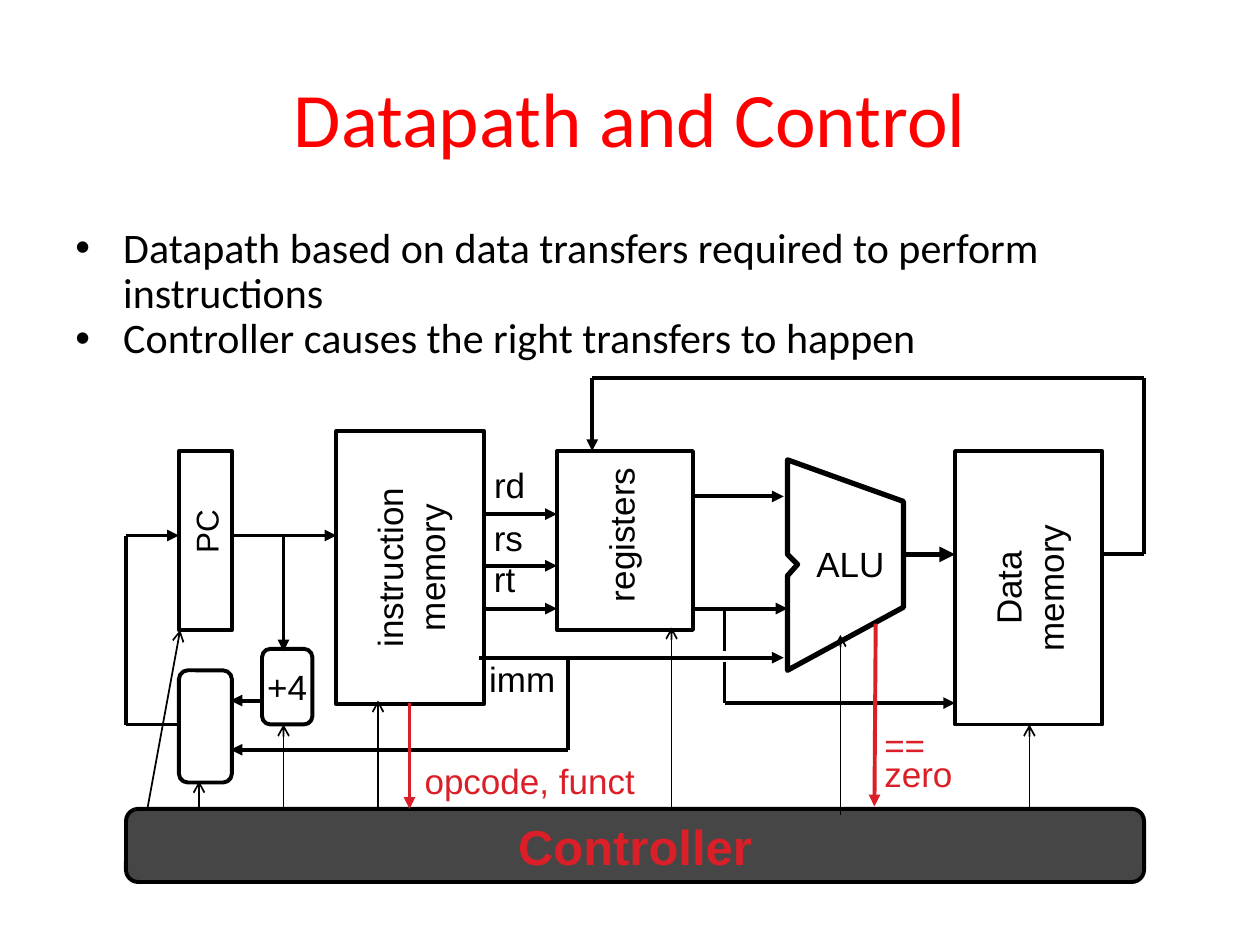
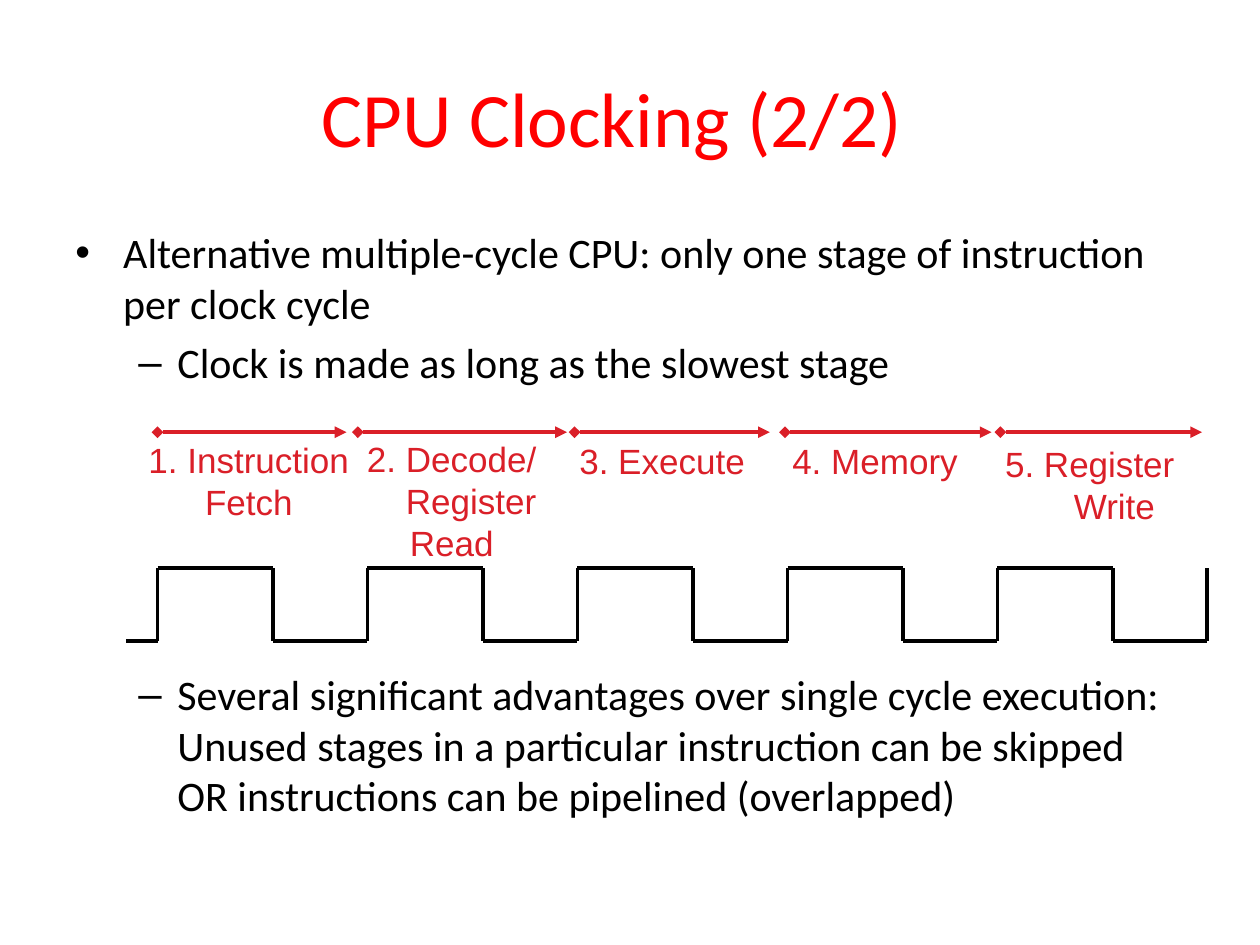
"""Build two slides on the datapath and the clocking of a CPU."""
import lxml.etree
import pptx
import pptx.dml.color
import pptx.enum.shapes
import pptx.enum.text
import pptx.oxml.ns
import pptx.util

HUES = {"title": "FF0000", "ink": "000000", "red": "DA1F28", "paper": "FFFFFF", "slate": "464646"}
INCH = 2.54
ALIGN = pptx.enum.text.PP_ALIGN
ANCHOR = pptx.enum.text.MSO_ANCHOR
KINDS = pptx.enum.shapes.MSO_SHAPE
BODY = (0.5, 1.75, 9, 4.95)

PATH = {
    "title": "Datapath and Control",
    "width": 9,
    "points": [
        (0, "Datapath based on data transfers required to perform instructions", 0),
        (0, "Controller causes the right transfers to happen", 0),
    ],
    "leading": 0.9,
}
CLOCK = {
    "title": "CPU Clocking (2/2)",
    "width": 8.72,
    "points": [
        (0, "Alternative multiple-cycle CPU: only one stage of instruction per clock cycle", 0),
        (1, "Clock is made as long as the slowest stage", 5.2),
        (1, "Several significant advantages over single cycle execution: Unused stages in a "
            "particular instruction can be skipped OR instructions can be pipelined (overlapped)", 161),
    ],
    "leading": 1.0,
}
LEVELS = [("•", 0.38, 0.38), ("–", 0.81, 0.31)]

BLOCKS = [
    ("RECTANGLE", (1.42, 3.58, 0.42, 1.42), 0, []),
    ("RECTANGLE", (2.17, 3.92, 2.17, 1.17), 270, ["instruction", "memory"]),
    ("ROUNDED_RECTANGLE", (2.08, 5.15, 0.4, 0.6), 0, ["+4"]),
    ("RECTANGLE", (4.42, 3.58, 1.08, 1.42), 0, []),
    ("RECTANGLE", (7.08, 4.08, 2.17, 1.17), 270, ["Data", "memory"]),
    ("ROUNDED_RECTANGLE", (1.42, 5.32, 0.42, 0.89), 0, []),
]
ALU = [(6.25, 3.65), (7.17, 3.98), (7.17, 4.82), (6.25, 5.32), (6.25, 4.57), (6.33, 4.48), (6.25, 4.4)]
LABELS = [
    ("PC", (1.36, 4.02, 0.55, 0.4), 270, 18, "ink"),
    ("registers", (4.29, 4.03, 1.27, 0.43), 270, 20, "ink"),
    ("rd", (3.82, 3.63, 0.45, 0.43), 0, 20, "ink"),
    ("rs", (3.82, 4.05, 0.43, 0.43), 0, 20, "ink"),
    ("rt", (3.82, 4.38, 0.37, 0.43), 0, 20, "ink"),
    ("imm", (3.78, 5.17, 0.73, 0.43), 0, 20, "ink"),
    ("ALU", (6.38, 4.26, 0.74, 0.43), 0, 20, "ink"),
    ("opcode, funct", (3.27, 5.98, 1.87, 0.43), 0, 20, "red"),
]
FLOWS = [
    [(1.83, 4.25), (2.67, 4.25)],
    [(2.25, 4.25), (2.25, 5.17)],
    [(2.08, 5.56), (1.83, 5.56)],
    [(1.42, 5.75), (1, 5.75), (1, 4.25), (1.42, 4.25)],
    [(3.83, 4.08), (4.42, 4.08)],
    [(3.83, 4.49), (4.42, 4.49)],
    [(3.83, 4.83), (4.42, 4.83)],
    [(3.8, 5.22), (6.22, 5.22)],
    [(4.51, 5.22), (4.51, 5.95), (1.83, 5.95)],
    [(5.5, 3.94), (6.22, 3.94)],
    [(5.5, 4.83), (6.25, 4.83)],
    [(5.75, 5.25), (5.75, 5.58), (7.58, 5.58)],
    [(8.75, 4.4), (9.08, 4.4), (9.08, 3), (4.7, 3), (4.7, 3.58)],
]
STUB = [(5.75, 4.83), (5.75, 5.17)]
OUTPUT = [(7.17, 4.4), (7.58, 4.4)]
STATUS = [[(3.25, 5.58), (3.25, 6.42)], [(6.95, 4.95), (6.94, 6.4)]]
SIGNALS = [
    [(1.58, 6.42), (1.58, 6.2)],
    [(1.17, 6.42), (1.43, 5)],
    [(2.25, 6.42), (2.25, 5.75)],
    [(3, 6.42), (3, 5.56)],
    [(5.33, 6.42), (5.33, 4.98)],
    [(6.67, 6.47), (6.67, 5.04)],
    [(8.17, 6.43), (8.17, 5.75)],
]

STAGES = [
    (1.25, 2.75, (1.03, 3.43, 1.89, 0.77), ["1. Instruction", "Fetch"], {}),
    (2.84, 4.5, (2.81, 3.42, 1.55, 1.1), ["2. Decode/", "Register", "Read"], {1: 0.31}),
    (4.56, 6.11, (4.4, 3.44, 1.71, 0.43), ["3. Execute"], {}),
    (6.23, 7.87, (6.09, 3.44, 1.71, 0.43), ["4. Memory"], {}),
    (7.94, 9.54, (7.82, 3.46, 1.66, 0.77), ["5. Register", "Write"], {1: 0.39}),
]
PULSE = {"from": 1, "first": 1.25, "step": 5 / 3, "high": 0.92, "end": 9.58, "top": 4.51, "base": 5.09}


def cm(value):
    return pptx.util.Cm(value * INCH)


def hue(name):
    return pptx.dml.color.RGBColor.from_string(HUES[name])


def apply(item, looks):
    for key, value in looks.items():
        setattr(item, key, value)


def add_xml(parent, tag, **values):
    return lxml.etree.SubElement(parent, pptx.oxml.ns.qn(tag), **values)


def write(shape, lines, size=20, color="ink", face="Arial", bold=False, wrap=False,
          align=ALIGN.CENTER, anchor=ANCHOR.MIDDLE, leading=None):
    frame = shape.text_frame
    apply(frame, {"word_wrap": wrap, "vertical_anchor": anchor})
    frame.text = "\n".join(lines)
    for para in frame.paragraphs:
        apply(para, {"alignment": align, "line_spacing": leading})
        font = para.runs[0].font
        apply(font, {"size": pptx.util.Pt(size), "name": face, "bold": bold})
        font.color.rgb = hue(color)
    return frame.paragraphs


def label(slide, lines, place, turn=0, **looks):
    box = slide.shapes.add_textbox(*map(cm, place))
    box.rotation = turn
    return write(box, lines, **looks)


def paint(shape, fill="paper", width=2.25):
    shape.shadow.inherit = False
    shape.fill.solid()
    shape.fill.fore_color.rgb = hue(fill)
    shape.line.color.rgb = hue("ink")
    shape.line.width = pptx.util.Pt(width)


def block(slide, kind, place, turn=0, lines=(), fill="paper", **looks):
    shape = slide.shapes.add_shape(getattr(KINDS, kind), *map(cm, place))
    shape.rotation = turn
    paint(shape, fill)
    if lines:
        write(shape, lines, **looks)


def wire(slide, points, tail=None, head=None, color="ink", width=2.25):
    last = len(points) - 2
    for index, (start, stop) in enumerate(zip(points, points[1:])):
        line = slide.shapes.add_connector(
            pptx.enum.shapes.MSO_CONNECTOR.STRAIGHT, *map(cm, start + stop))
        line.line.color.rgb = hue(color)
        line.line.width = pptx.util.Pt(width)
        props = line._element.spPr
        edge = props.find(pptx.oxml.ns.qn("a:ln"))
        if head and index == 0:
            add_xml(edge, "a:headEnd", type=head)
        if tail and index == last:
            add_xml(edge, "a:tailEnd", type=tail)
        add_xml(props, "a:effectLst")


def open_slide(deck, page):
    slide = deck.slides.add_slide(deck.slide_layouts[6])
    label(slide, [page["title"]], (0.5, 0.3, page["width"], 1.25),
          size=44, color="title", face="Calibri", wrap=True)
    paras = label(slide, [text for _, text, _ in page["points"]], BODY, size=24, face="Calibri",
                  wrap=True, align=ALIGN.LEFT, anchor=ANCHOR.TOP, leading=page["leading"])
    for para, (level, _, gap) in zip(paras, page["points"]):
        mark, left, hang = LEVELS[level]
        apply(para, {"level": level, "space_before": pptx.util.Pt(gap)})
        props = para._p.get_or_add_pPr()
        props.set("marL", str(cm(left)))
        props.set("indent", str(-cm(hang)))
        add_xml(props, "a:buFont", typeface="Arial")
        add_xml(props, "a:buChar", char=mark)
    return slide


def draw_path(deck):
    slide = open_slide(deck, PATH)
    for kind, place, turn, lines in BLOCKS:
        block(slide, kind, place, turn, lines)
    pen = slide.shapes.build_freeform(*map(cm, ALU[0]))
    pen.add_line_segments([(cm(x), cm(y)) for x, y in ALU[1:]], close=True)
    paint(pen.convert_to_shape(), width=3)
    for points in FLOWS:
        wire(slide, points, "triangle")
    wire(slide, STUB)
    wire(slide, OUTPUT, "triangle", width=3)
    for text, place, turn, size, color in LABELS:
        label(slide, [text], place, turn, size=size, color=color)
    block(slide, "ROUNDED_RECTANGLE", (1, 6.42, 8.08, 0.58), lines=["Controller"],
          fill="slate", size=28, color="red", bold=True)
    for points in SIGNALS:
        wire(slide, points, "arrow", width=1)
    for points in STATUS:
        wire(slide, points, "triangle", color="red")
    label(slide, ["==", "zero"], (6.92, 5.77, 0.75, 0.59), color="red", wrap=True,
          align=ALIGN.LEFT, leading=0.7)


def draw_clock(deck):
    slide = open_slide(deck, CLOCK)
    for start, stop, place, lines, shifts in STAGES:
        paras = label(slide, lines, place, color="red")
        for index, left in shifts.items():
            paras[index]._p.get_or_add_pPr().set("marL", str(cm(left)))
        wire(slide, [(start, 3.43), (stop, 3.43)], "triangle", "diamond", "red")
    top, base = PULSE["top"], PULSE["base"]
    points = [(PULSE["from"], base)]
    for beat in range(len(STAGES)):
        rise = PULSE["first"] + beat * PULSE["step"]
        fall = rise + PULSE["high"]
        points += [(rise, base), (rise, top), (fall, top), (fall, base)]
    wire(slide, points + [(PULSE["end"], base), (PULSE["end"], top)])


def main():
    deck = pptx.Presentation()
    apply(deck, {"slide_width": cm(10), "slide_height": cm(7.5)})
    draw_path(deck)
    draw_clock(deck)
    deck.save("out.pptx")


if __name__ == "__main__":
    main()
